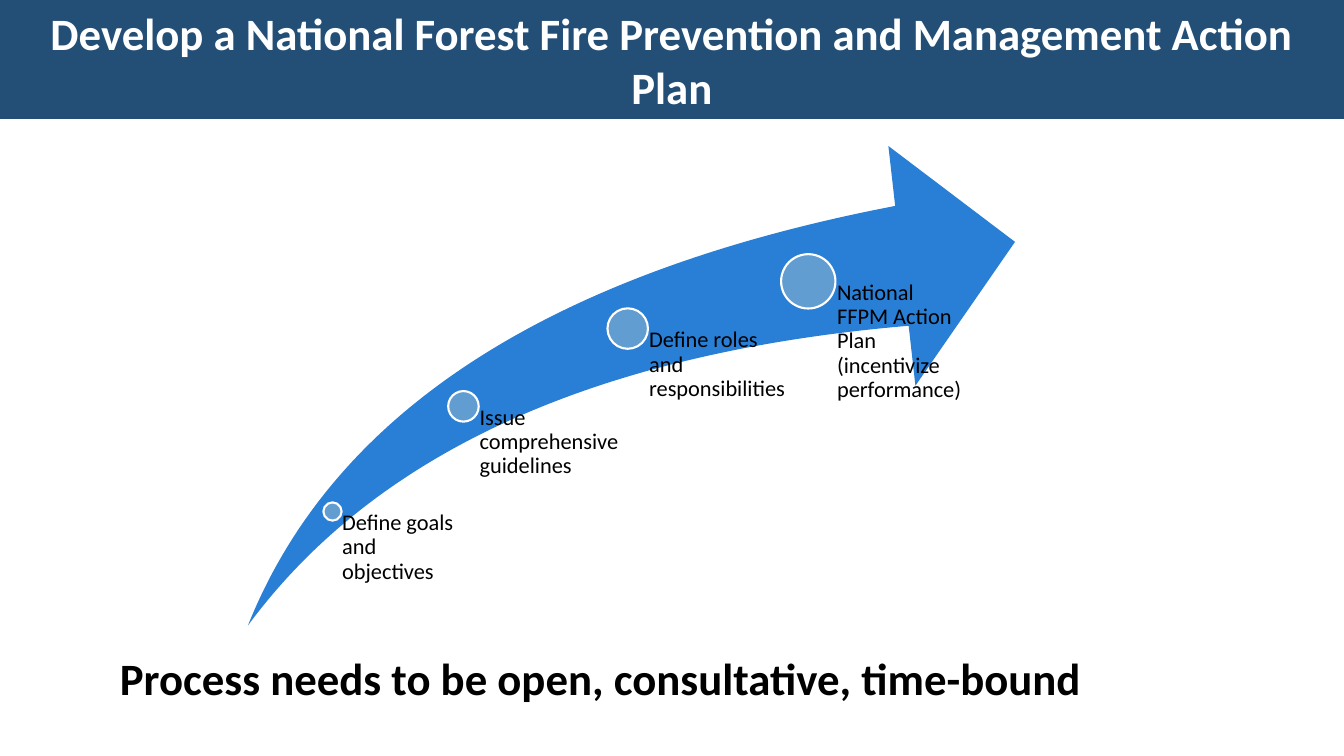
from pptx import Presentation
from pptx.dml.color import RGBColor
from pptx.enum.shapes import MSO_SHAPE
from pptx.enum.text import MSO_ANCHOR, PP_ALIGN
from pptx.util import Cm, Pt

WIDTH, HEIGHT = 33.87, 19.05
BASE = 15.76  # lower edge of the arrow and of every label

# Centre x, centre y, dot diameter, label width, label (cm)
STEPS = [
    (8.38, 12.89, 0.46, 3.3, "Define goals and objectives"),
    (11.68, 10.24, 0.77, 4.06, "Issue comprehensive guidelines"),
    (15.82, 8.28, 1.02, 4.06, "Define roles and responsibilities"),
    (20.37, 7.09, 1.37, 4.06,
     "National FFPM Action Plan (incentivize performance)"),
]


def color(code):
    return RGBColor.from_string(code)


def write(frame, text, size=16, ink="000000", bold=False,
          align=PP_ALIGN.LEFT, anchor=MSO_ANCHOR.TOP, line=None, inset=None):
    frame.word_wrap = True
    frame.vertical_anchor = anchor
    if inset is not None:
        frame.margin_left = Cm(inset)
        frame.margin_top = frame.margin_right = frame.margin_bottom = 0
    para = frame.paragraphs[0]
    para.alignment = align
    if line:
        para.line_spacing = line
    run = para.add_run()
    run.text = text
    font = run.font
    font.name, font.size, font.bold = "Calibri", Pt(size), bold
    font.color.rgb = color(ink)


def draw(slide, kind, left, top, width, height, fill, edge=None):
    shape = slide.shapes.add_shape(
        kind, Cm(left), Cm(top), Cm(width), Cm(height))
    shape.shadow.inherit = False
    shape.fill.solid()
    shape.fill.fore_color.rgb = color(fill)
    if edge:
        shape.line.color.rgb = color(edge)
        shape.line.width = Pt(1.5)
    else:
        shape.line.fill.background()
    return shape


def label(slide, left, top, width, height, text, **style):
    box = slide.shapes.add_textbox(Cm(left), Cm(top), Cm(width), Cm(height))
    write(box.text_frame, text, **style)


def step(slide, x, y, size, width, text):
    draw(slide, MSO_SHAPE.OVAL, x - size / 2, y - size / 2, size, size,
         "629DD1", edge="FFFFFF")
    # The label starts at the dot's centre and is inset past its edge
    label(slide, x, y, width, BASE - y, text, line=0.9, inset=0.53 * size)


def main():
    deck = Presentation()
    deck.slide_width, deck.slide_height = Cm(WIDTH), Cm(HEIGHT)
    slide = deck.slides.add_slide(deck.slide_layouts[6])

    # Closing message
    label(slide, 2.77, 16.26, 28.35, 2.79,
          "Process needs to be open, consultative, time-bound",
          size=32, bold=True)

    # Rising arrow with its steps
    arrow = draw(slide, MSO_SHAPE.SWOOSH_ARROW, 6.25, 3.68, 19.33,
                 BASE - 3.68, "297FD5")
    arrow.adjustments[0] = arrow.adjustments[1] = 0.25
    for item in STEPS:
        step(slide, *item)

    # Title band
    band = draw(slide, MSO_SHAPE.RECTANGLE, 0, 0, WIDTH, 3, "234F77")
    write(band.text_frame,
          "Develop a National Forest Fire Prevention and Management Action Plan",
          size=32, ink="FFFFFF", bold=True, align=PP_ALIGN.CENTER,
          anchor=MSO_ANCHOR.MIDDLE)

    deck.save("out.pptx")


if __name__ == "__main__":
    main()
